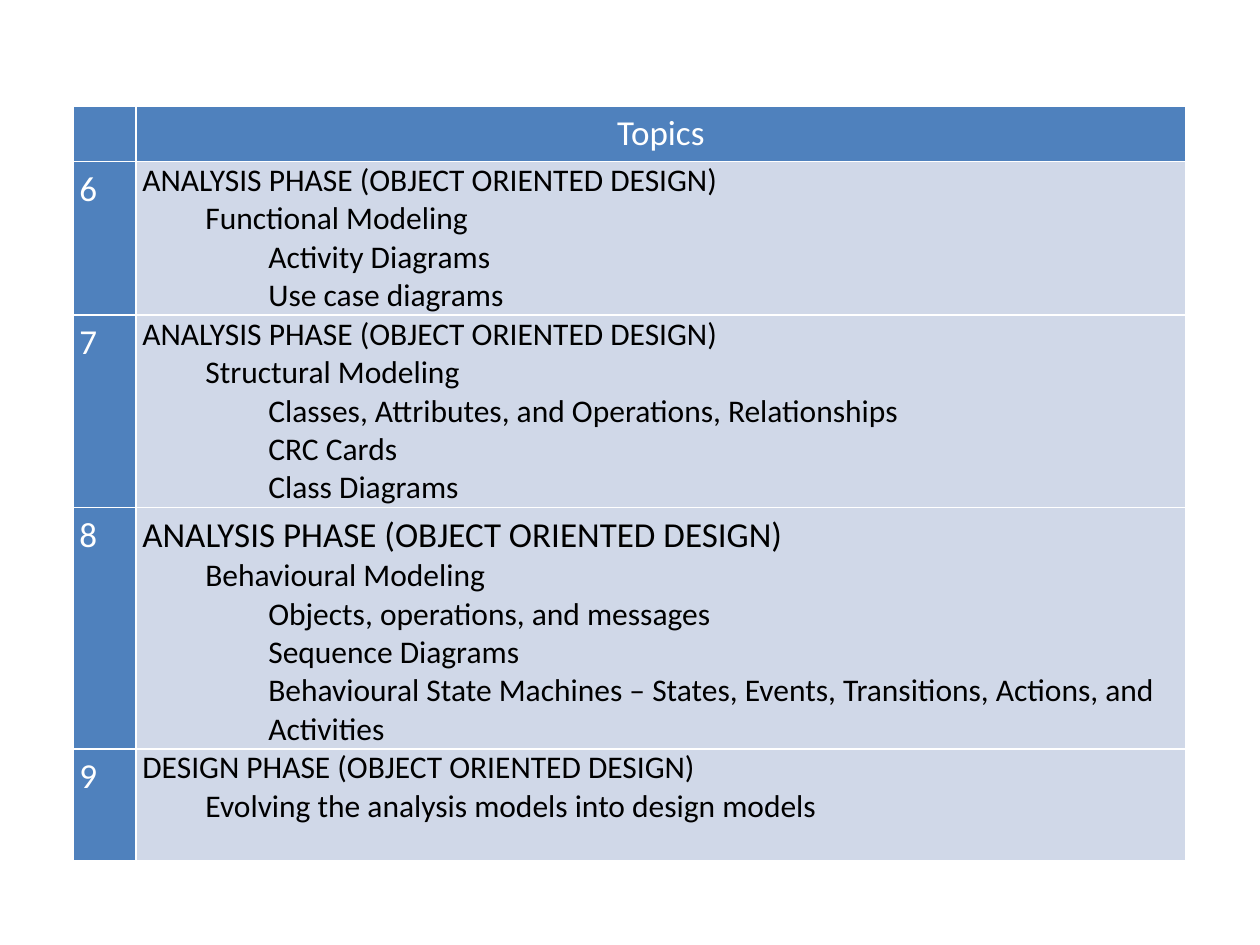
from dataclasses import dataclass

from lxml import etree
from pptx import Presentation
from pptx.dml.color import RGBColor
from pptx.enum.text import PP_ALIGN
from pptx.oxml.ns import qn
from pptx.util import Inches, Pt

CENTER = PP_ALIGN.CENTER
LEFT = PP_ALIGN.LEFT
BLANK_LAYOUT = 6


@dataclass(frozen=True)
class Theme:
    font: str = "Calibri"
    large: int = 20
    normal: int = 18
    accent: str = "4F81BD"
    band: str = "D0D8E8"
    white: str = "FFFFFF"
    ink: str = "000000"
    border: int = 1
    leading: float = 1.15
    indent: float = 0.5


@dataclass(frozen=True)
class Line:
    text: str
    level: int = 0
    large: bool = False


@dataclass(frozen=True)
class Session:
    number: str
    height: float
    lines: tuple[Line, ...]


THEME = Theme()
ANALYSIS = "ANALYSIS PHASE (OBJECT ORIENTED DESIGN)"
HEADER_HEIGHT = 0.44
COLUMN_WIDTHS = (0.5, 8.33)
SESSIONS = (
    Session("6", 1.22, (
        Line(ANALYSIS),
        Line("Functional Modeling", 1),
        Line("Activity Diagrams", 2),
        Line("Use case diagrams", 2),
    )),
    Session("7", 1.52, (
        Line(ANALYSIS),
        Line("Structural Modeling", 1),
        Line("Classes, Attributes, and Operations, Relationships", 2),
        Line("CRC Cards", 2),
        Line("Class Diagrams", 2),
    )),
    Session("8", 1.91, (
        Line(ANALYSIS, large=True),
        Line("Behavioural Modeling", 1),
        Line("Objects, operations, and messages", 2),
        Line("Sequence Diagrams", 2),
        Line("Behavioural State Machines – States, Events, Transitions, "
             "Actions, and Activities", 2),
    )),
    Session("9", 0.89, (
        Line("DESIGN PHASE (OBJECT ORIENTED DESIGN)"),
        Line("Evolving the analysis models into design models", 1),
    )),
)


def style_cell(cell, fill: str) -> None:
    properties = cell._tc.get_or_add_tcPr()
    for side in ("lnL", "lnR", "lnT", "lnB"):
        edge = etree.SubElement(properties, qn(f"a:{side}"), w=str(Pt(THEME.border)))
        paint = etree.SubElement(edge, qn("a:solidFill"))
        etree.SubElement(paint, qn("a:srgbClr"), val=THEME.white)
    cell.fill.solid()
    cell.fill.fore_color.rgb = RGBColor.from_string(fill)
    cell.margin_left = cell.margin_right = Inches(0.05)
    cell.margin_top = cell.margin_bottom = 0


def write_cell(cell, lines: tuple[Line, ...], color: str, align=LEFT) -> None:
    cell.text_frame.text = "\n".join(line.text for line in lines)
    for paragraph, line in zip(cell.text_frame.paragraphs, lines):
        paragraph.alignment = align
        paragraph.level = line.level
        paragraph.line_spacing = THEME.leading if line.large else 1.0
        properties = paragraph._p.get_or_add_pPr()
        properties.set("marL", str(Inches(THEME.indent * line.level)))
        properties.set("indent", "0")
        for run in paragraph.runs:
            run.font.name = THEME.font
            run.font.size = Pt(THEME.large if line.large else THEME.normal)
            run.font.bold = False
            run.font.color.rgb = RGBColor.from_string(color)


def add_topics_table(slide) -> None:
    heights = (HEADER_HEIGHT, *(session.height for session in SESSIONS))
    topics = slide.shapes.add_table(
        len(heights), len(COLUMN_WIDTHS), Inches(0.58), Inches(0.84),
        Inches(sum(COLUMN_WIDTHS)), Inches(sum(heights))).table
    for column, width in zip(topics.columns, COLUMN_WIDTHS):
        column.width = Inches(width)
    for row, height in zip(topics.rows, heights):
        row.height = Inches(height)

    for heading in topics.rows[0].cells:
        style_cell(heading, THEME.accent)
    write_cell(topics.cell(0, 1), (Line("Topics", large=True),), THEME.white, CENTER)

    for index, session in enumerate(SESSIONS, start=1):
        number, outline = topics.rows[index].cells
        style_cell(number, THEME.accent)
        write_cell(number, (Line(session.number, large=True),), THEME.white)
        style_cell(outline, THEME.band)
        write_cell(outline, session.lines, THEME.ink)


def main() -> None:
    presentation = Presentation()
    presentation.slide_width = Inches(10)
    presentation.slide_height = Inches(7.5)
    slide = presentation.slides.add_slide(presentation.slide_layouts[BLANK_LAYOUT])
    add_topics_table(slide)
    presentation.save("out.pptx")


if __name__ == "__main__":
    main()
